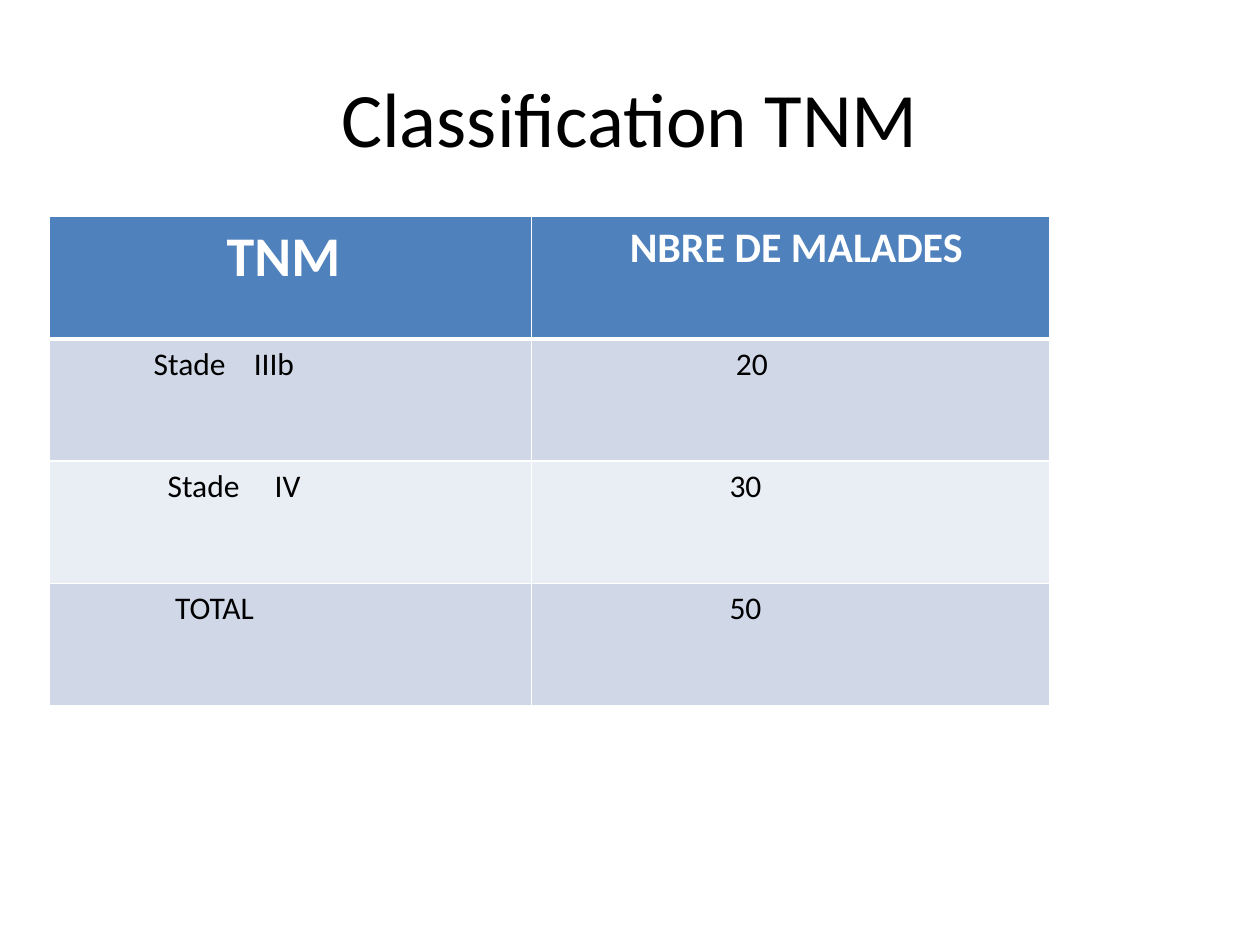
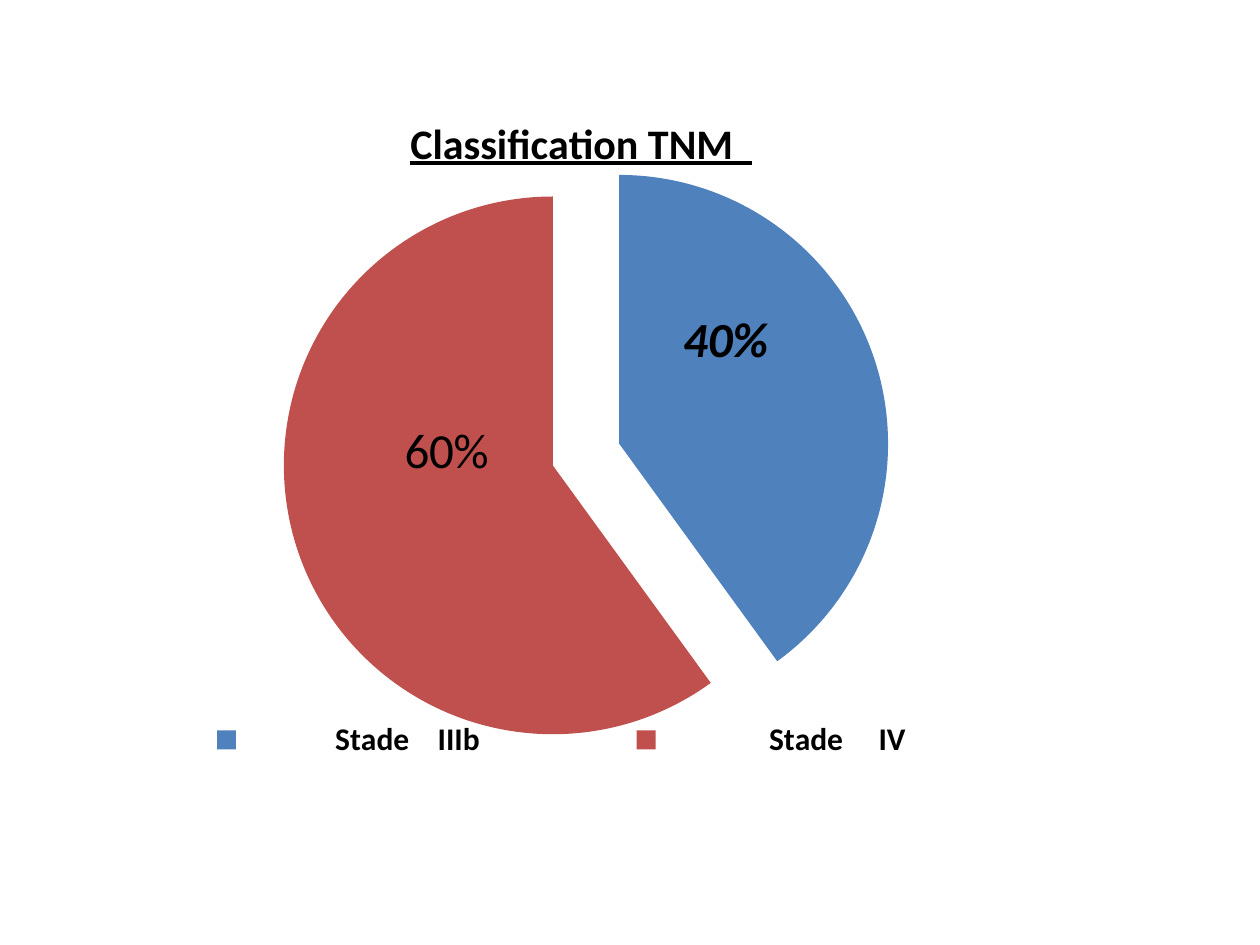
from dataclasses import dataclass
from typing import Any

from lxml import etree
from pptx import Presentation
from pptx.chart.data import CategoryChartData
from pptx.dml.color import RGBColor
from pptx.enum.chart import XL_CHART_TYPE as ChartType
from pptx.enum.chart import XL_LABEL_POSITION as LabelPos
from pptx.enum.chart import XL_LEGEND_POSITION as LegendPos
from pptx.enum.text import MSO_ANCHOR as Anchor
from pptx.enum.text import PP_ALIGN as Align
from pptx.oxml.ns import qn
from pptx.util import Inches, Pt

# Shared look
FONT = "Calibri"
BLACK, WHITE = "000000", "FFFFFF"
BLUE, RED = "4F81BD", "C0504D"
BANDS = ("D0D8E8", "E9EDF4")
TITLE = "Classification TNM"


@dataclass
class CellText:
    words: tuple[str, ...]
    size: float = 18
    left: float = 0
    right: float = 0
    gap: float = 0  # extra points between two words


@dataclass
class Slice:
    category: str
    value: int
    color: str
    explosion: int
    label_shift: tuple[float, float]
    label_font: dict[str, bool]


ROWS = (
    (CellText(("TNM",), 32, right=0.11), CellText(("NBRE DE MALADES",), 24, left=0.09)),
    (CellText(("Stade", "IIIb"), left=0.73, gap=12), CellText(("20",), left=1.52)),
    (CellText(("Stade", "IV"), left=0.84, gap=16), CellText(("30",), left=1.47)),
    (CellText(("TOTAL",), left=0.9), CellText(("50",), left=1.47)),
)
COL_WIDTHS = (3.83, 4.11)
ROW_HEIGHT = 0.97

SLICES = (
    Slice("             Stade    IIIb ", 40, BLUE, 0, (-0.02, -0.09),
          {"bold": True, "italic": True}),
    Slice("               Stade     IV ", 60, RED, 26, (0.02, -0.08),
          {"bold": False, "italic": False}),
)


def rgb(color: str) -> RGBColor:
    return RGBColor.from_string(color)


def set_font(font: Any, color: str = BLACK, **values: Any) -> None:
    font.color.rgb = rgb(color)
    for name, value in {"name": FONT, **values}.items():
        setattr(font, name, value)


def add_title(slide: Any, text: str) -> None:
    sp = slide.shapes.add_textbox(Inches(0.5), Inches(0.3), Inches(9), Inches(1.25))
    tf = sp.text_frame
    tf.word_wrap = True
    tf.vertical_anchor = Anchor.MIDDLE
    p = tf.paragraphs[0]
    p.alignment = Align.CENTER
    r = p.add_run()
    r.text = text
    set_font(r.font, size=Pt(44))


def set_borders(cell: Any, bottom: float) -> None:
    tc_pr = cell._tc.get_or_add_tcPr()
    for i, (side, width) in enumerate((("L", 1), ("R", 1), ("T", 1), ("B", bottom))):
        ln = etree.Element(qn(f"a:ln{side}"), w=str(Pt(width)))
        fill = etree.SubElement(ln, qn("a:solidFill"))
        etree.SubElement(fill, qn("a:srgbClr"), val=WHITE)
        tc_pr.insert(i, ln)


def fill_cell(cell: Any, text: CellText, header: bool, color: str) -> None:
    cell.fill.solid()
    cell.fill.fore_color.rgb = rgb(color)
    set_borders(cell, 3 if header else 1)
    p = cell.text_frame.paragraphs[0]
    p.alignment = Align.CENTER if header else Align.LEFT
    p_pr = p._p.get_or_add_pPr()
    p_pr.set("marL", str(Inches(text.left)))
    p_pr.set("marR", str(Inches(text.right)))
    parts = [text.words[0]]
    for word in text.words[1:]:
        parts += [" ", word]
    for part in parts:
        r = p.add_run()
        r.text = part
        set_font(r.font, WHITE if header else BLACK, size=Pt(text.size), bold=header)
        if part == " ":
            r.font._element.set("spc", str(int(text.gap * 100)))


def add_stage_table(slide: Any) -> None:
    table = slide.shapes.add_table(
        len(ROWS), len(COL_WIDTHS), Inches(0.39), Inches(1.72),
        Inches(sum(COL_WIDTHS)), Inches(ROW_HEIGHT * len(ROWS))).table
    for col, width in zip(table.columns, COL_WIDTHS):
        col.width = Inches(width)
    for i, row in enumerate(ROWS):
        table.rows[i].height = Inches(ROW_HEIGHT)
        color = BANDS[(i - 1) % 2] if i else BLUE
        for j, text in enumerate(row):
            fill_cell(table.cell(i, j), text, i == 0, color)


def set_layout(parent: Any, index: int, **values: Any) -> None:
    """Place a chart part by fractions of the chart area."""
    for old in parent.findall(qn("c:layout")):
        parent.remove(old)
    layout = etree.Element(qn("c:layout"))
    manual = etree.SubElement(layout, qn("c:manualLayout"))
    for name, value in values.items():
        etree.SubElement(manual, qn(f"c:{name}"), val=str(value))
    parent.insert(index, layout)


def explode(before: Any, percent: int) -> None:
    before.addprevious(etree.Element(qn("c:explosion"), val=str(percent)))


def add_stage_pie(slide: Any) -> None:
    data = CategoryChartData()
    data.categories = [s.category for s in SLICES]
    data.add_series("Series 1", [s.value for s in SLICES])
    chart = slide.shapes.add_chart(
        ChartType.PIE, Inches(0.62), Inches(0.85), Inches(8.59), Inches(5.4), data).chart
    set_font(chart.font, size=Pt(10))
    edge = {"xMode": "edge", "yMode": "edge"}

    # Title, clear of the pie, and legend
    chart.has_title = True
    p = chart.chart_title.text_frame.paragraphs[0]
    r = p.add_run()
    r.text = TITLE + "  "
    set_font(r.font, size=Pt(24), bold=True, underline=True)
    set_layout(chart.chart_title._element, 1, **edge, x=0.3, y=0)
    chart.has_legend = True
    legend = chart.legend
    legend.position = LegendPos.TOP
    legend.include_in_layout = False
    set_font(legend.font, size=Pt(18), bold=True)
    set_layout(legend._element, 1, **edge, x=0, y=0.89, w=0.9, h=0.08)

    # Slices and their percentages
    plot = chart.plots[0]
    plot.vary_by_categories = True
    series = plot.series[0]
    labels = series.data_labels
    labels.show_percentage, labels.show_value = True, False
    set_font(labels.font, size=Pt(28), bold=True)
    for i, s in enumerate(SLICES):
        point = series.points[i]
        point.format.fill.solid()
        point.format.fill.fore_color.rgb = rgb(s.color)
        label = point.data_label
        set_font(label.font, size=Pt(28), **s.label_font)
        label.position = LabelPos.CENTER
    ser = series._element
    explode(ser.find(qn("c:dPt")), 5)
    for s, d_pt in zip(SLICES, ser.findall(qn("c:dPt"))):
        explode(d_pt.find(qn("c:spPr")), s.explosion)
    for s, d_lbl in zip(SLICES, ser.find(qn("c:dLbls")).findall(qn("c:dLbl"))):
        x, y = s.label_shift
        set_layout(d_lbl, 1, x=x, y=y)
        d_lbl.find(qn("c:showVal")).set("val", "0")
        d_lbl.find(qn("c:showPercent")).set("val", "1")
    plot_area = plot._element.getparent()
    set_layout(plot_area, 0, layoutTarget="inner", **edge, x=0, y=0.08, w=1, h=0.83)


def main() -> None:
    prs = Presentation()
    prs.slide_width, prs.slide_height = Inches(10), Inches(7.5)
    blank = prs.slide_layouts[6]

    # Slide 1: table of stages
    slide = prs.slides.add_slide(blank)
    add_title(slide, TITLE)
    add_stage_table(slide)

    # Slide 2: share of each stage
    add_stage_pie(prs.slides.add_slide(blank))
    prs.save("out.pptx")


if __name__ == "__main__":
    main()
